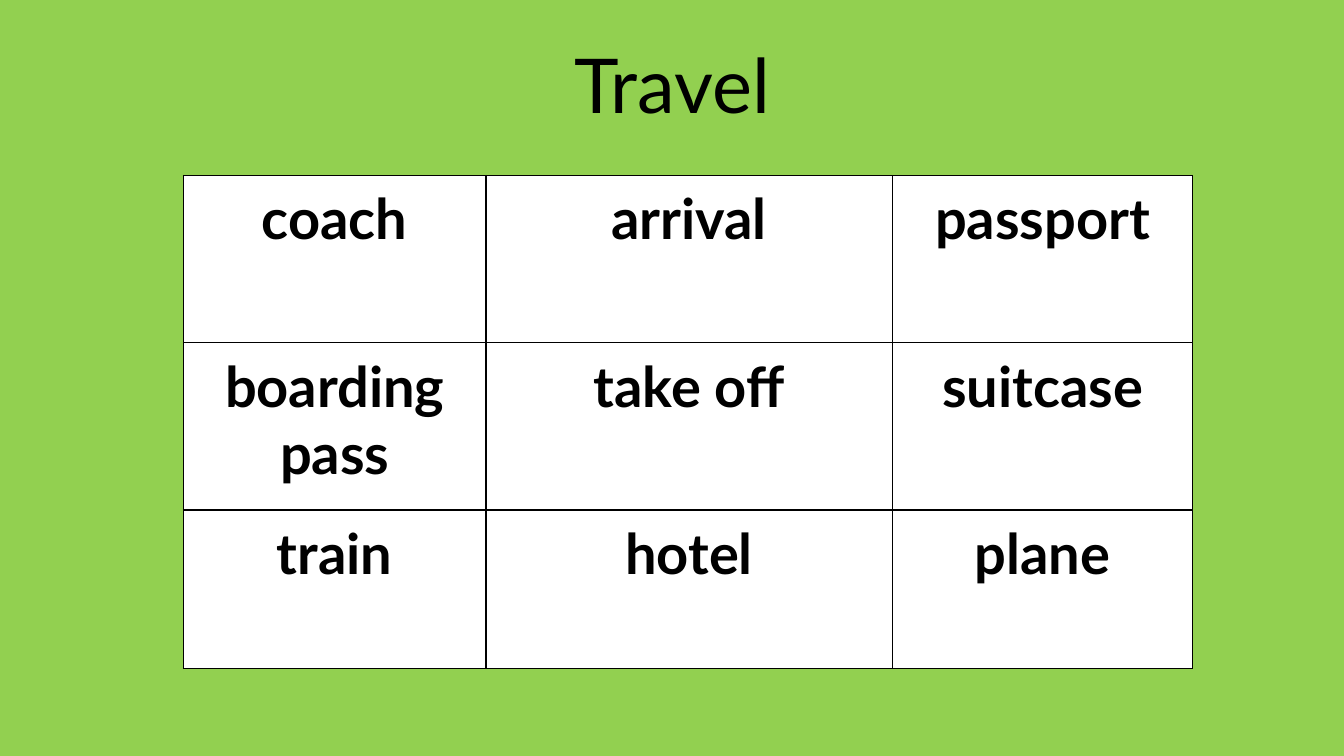
"""Build a travel vocabulary slide with a three by three word grid."""
from lxml.etree import SubElement
from pptx import Presentation
from pptx.dml.color import RGBColor
from pptx.enum.text import MSO_ANCHOR as Anchor, PP_ALIGN as Align
from pptx.oxml.ns import qn
from pptx.util import Inches, Pt

TITLE = "Travel"
WORDS = [
    ["coach", "arrival", "passport"],
    ["boarding pass", "take off", "suitcase"],
    ["train", "hotel", "plane"],
]
COLUMN_WIDTHS = [3, 4.03, 2.98]
ROW_HEIGHTS = [1.66, 1.66, 1.57]
TABLE_LEFT, TABLE_TOP = 1.82, 1.74
COLORS = {"background": "92D050", "cell": "FFFFFF", "ink": "000000"}
FONT = "Lato"


def paint(fill, color):
    fill.solid()
    fill.fore_color.rgb = RGBColor.from_string(COLORS[color])


def write(frame, text, size, bold=False, spacing=1.0):
    para = frame.paragraphs[0]
    para.alignment = Align.CENTER
    para.line_spacing = spacing
    span = para.add_run()
    span.text = text
    span.font.name = FONT
    span.font.size = Pt(size)
    span.font.bold = bold
    span.font.color.rgb = RGBColor.from_string(COLORS["ink"])


def add_borders(cell, width=1):
    properties = cell._tc.get_or_add_tcPr()
    for position, side in enumerate(("a:lnL", "a:lnR", "a:lnT", "a:lnB")):
        line = SubElement(properties, qn(side), w=str(Pt(width)))
        fill = SubElement(line, qn("a:solidFill"))
        SubElement(fill, qn("a:srgbClr"), val=COLORS["ink"])
        properties.insert(position, line)


def add_title(slide):
    title = slide.shapes.title
    title.left, title.top = Inches(0.92), Inches(0.32)
    title.width, title.height = Inches(11.5), Inches(1.02)
    title.text_frame.vertical_anchor = Anchor.BOTTOM
    write(title.text_frame, TITLE, size=54, spacing=0.9)


def add_word_grid(slide):
    table = slide.shapes.add_table(
        len(ROW_HEIGHTS), len(COLUMN_WIDTHS),
        Inches(TABLE_LEFT), Inches(TABLE_TOP),
        Inches(sum(COLUMN_WIDTHS)), Inches(sum(ROW_HEIGHTS)),
    ).table
    table.first_row = table.horz_banding = False
    for column, width in zip(table.columns, COLUMN_WIDTHS):
        column.width = Inches(width)
    for row, height, words in zip(table.rows, ROW_HEIGHTS, WORDS):
        row.height = Inches(height)
        for cell, word in zip(row.cells, words):
            cell.margin_left = cell.margin_right = Inches(0.18)
            cell.margin_top = cell.margin_bottom = Inches(0.09)
            paint(cell.fill, "cell")
            add_borders(cell)
            write(cell.text_frame, word, size=40, bold=True)


def main():
    deck = Presentation()
    deck.slide_width, deck.slide_height = Inches(13.33), Inches(7.5)
    slide = deck.slides.add_slide(deck.slide_layouts[5])
    paint(slide.background.fill, "background")
    add_title(slide)
    add_word_grid(slide)
    deck.save("out.pptx")


if __name__ == "__main__":
    main()
